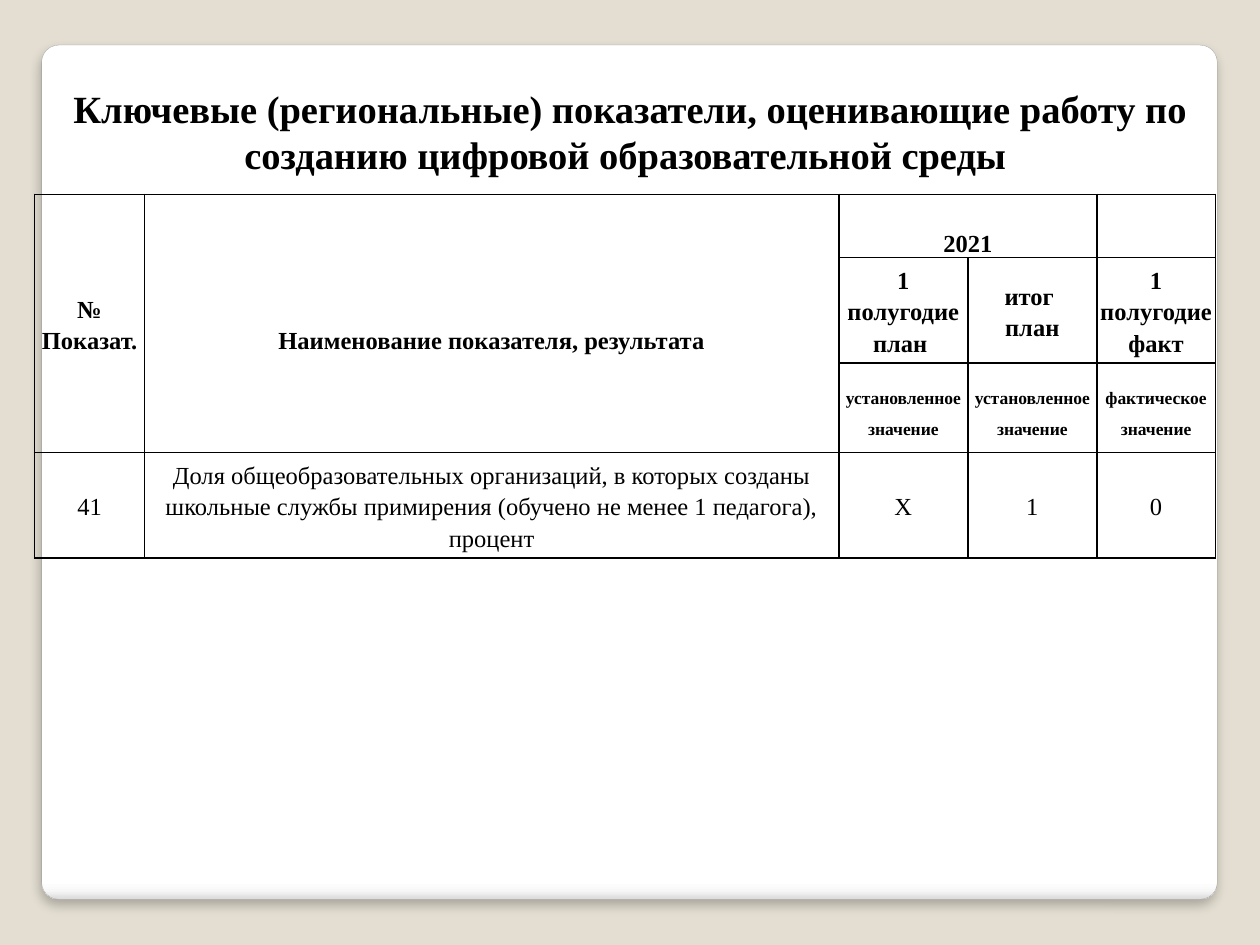
from lxml import etree
from pptx import Presentation
from pptx import util as u
from pptx.dml.color import RGBColor
from pptx.enum import shapes, text
from pptx.oxml import ns

BEIGE = RGBColor(0xE3, 0xDE, 0xD1)
GREY = RGBColor(0xA4, 0xA4, 0xA4)
BLACK = RGBColor(0, 0, 0)
FACE = "Times New Roman"
STOPS = [(0, "FFFFFF"), (98, "FFFFFF"), (99, "F7F7F7"), (100, "DADADA")]
COLS = [2.21, 14, 2.6, 2.6, 2.39]
ROWS = [1.27, 2.13, 1.8, 2.13]
SPANS = [(0, 0, 2, 0), (0, 1, 2, 1), (0, 2, 0, 3)]
HEAD = {"size": u.Pt(14), "bold": True}
NOTE = {"size": u.Pt(10), "bold": True}
BODY = {"size": u.Pt(14), "bold": False}
FONTS = [HEAD, HEAD, NOTE, BODY]
TITLE = ("Ключевые (региональные) показатели, оценивающие работу по "
         "созданию цифровой образовательной среды ")
DATA = [
    ["№\nПоказат.", "Наименование показателя, результата", "2021", "", ""],
    ["", "", "1 полугодие план ", "итог \nплан", "1 полугодие факт"],
    ["", "", "установленное значение", "установленное значение",
     "фактическое значение"],
    ["41", "Доля общеобразовательных организаций, в которых созданы школьные "
     "службы примирения (обучено не менее 1 педагога), процент", "X", "1", "0"],
]


def put(obj, vals):
    """Set each named attribute of an object."""
    for key, val in vals.items():
        setattr(obj, key, val)


def node(xml):
    """Build an element from a fragment of DrawingML."""
    return etree.fromstring(xml.replace(">", f' xmlns:a="{ns.nsuri("a")}">', 1))


class Deck:
    """Hold the style and the current slide."""

    def __init__(self):
        """Start a deck with one titled slide."""
        self.prs = Presentation()
        put(self.prs, {"slide_width": u.Cm(25.4), "slide_height": u.Cm(19.05)})
        self.slide = self.prs.slides.add_slide(self.prs.slide_layouts[5])
        fill = self.slide.background.fill
        fill.solid()
        fill.fore_color.rgb = BEIGE

    def label(self, frame, words, font, lead=None):
        """Fill a text frame with centred paragraphs."""
        frame.text = words
        for para in frame.paragraphs:
            put(para, {"alignment": text.PP_ALIGN.CENTER, "line_spacing": lead})
            for run in para.runs:
                put(run.font, {"name": FACE, **font})
                run.font.color.rgb = BLACK

    def panel(self, x, y, w, h):
        """Draw the rounded white sheet behind everything."""
        box = self.slide.shapes.add_shape(
            shapes.MSO_SHAPE.ROUNDED_RECTANGLE, *map(u.Cm, (x, y, w, h)))
        box.adjustments[0] = 0.02
        box.line.color.rgb = GREY
        box.line.width = u.Pt(0.16)
        box.fill.gradient()
        box.fill.gradient_angle = 270
        stops = box.element.spPr.find(".//" + ns.qn("a:gsLst"))
        stops[:] = [node(f'<a:gs pos="{pos * 1000}"><a:srgbClr val="{tone}"/></a:gs>')
                    for pos, tone in STOPS]
        box.element.spPr.append(node(
            '<a:effectLst><a:outerShdw '
            f'blurRad="{u.Pt(6)}" dist="{u.Pt(4)}" '
            'dir="5400000" rotWithShape="0"><a:srgbClr val="000000">'
            '<a:alpha val="25000"/></a:srgbClr></a:outerShdw></a:effectLst>'))
        self.slide.shapes.element.insert(2, box.element)

    def title(self, words, x, y, w, h):
        """Place and format the title."""
        box = self.slide.shapes.title
        put(box, {"left": u.Cm(x), "top": u.Cm(y),
                  "width": u.Cm(w), "height": u.Cm(h)})
        put(box.text_frame, {"word_wrap": True,
                             "auto_size": text.MSO_AUTO_SIZE.NONE,
                             "vertical_anchor": text.MSO_ANCHOR.MIDDLE})
        self.label(box.text_frame, words, {"size": u.Pt(22), "bold": True})

    def edge(self, cell):
        """Give a cell thin black borders and no fill."""
        props = cell._tc.get_or_add_tcPr()
        for side in "LRTB":
            props.append(node(
                f'<a:ln{side} w="{u.Pt(1)}"><a:solidFill>'
                f'<a:srgbClr val="{BLACK}"/></a:solidFill></a:ln{side}>'))
        cell.fill.background()

    def table(self, x, y):
        """Build the indicator table."""
        grid = self.slide.shapes.add_table(
            len(ROWS), len(COLS), u.Cm(x), u.Cm(y),
            u.Cm(sum(COLS)), u.Cm(sum(ROWS))).table
        put(grid, {"first_row": False, "horz_banding": False})
        for col, wide in zip(grid.columns, COLS):
            col.width = u.Cm(wide)
        for r, (high, line, font) in enumerate(zip(ROWS, DATA, FONTS)):
            grid.rows[r].height = u.Cm(high)
            for c, words in enumerate(line):
                cell = grid.cell(r, c)
                put(cell, {"margin_left": u.Cm(0.05), "margin_right": u.Cm(0.05),
                           "margin_top": 0, "margin_bottom": 0,
                           "vertical_anchor": text.MSO_ANCHOR.MIDDLE})
                self.label(cell.text_frame, words, font, u.Pt(18))
                self.edge(cell)
        for top, left, low, right in SPANS:
            grid.cell(top, left).merge(grid.cell(low, right))
        for c in (1, 2):
            grid.cell(0, c).margin_top = u.Pt(18)


def main():
    """Build and save the slide."""
    deck = Deck()
    deck.panel(0.84, 0.91, 23.7, 17.22)
    deck.title(TITLE, 0, 1.4, 25.4, 2.5)
    deck.table(0.7, 3.92)
    deck.prs.save("out.pptx")


if __name__ == "__main__":
    main()
